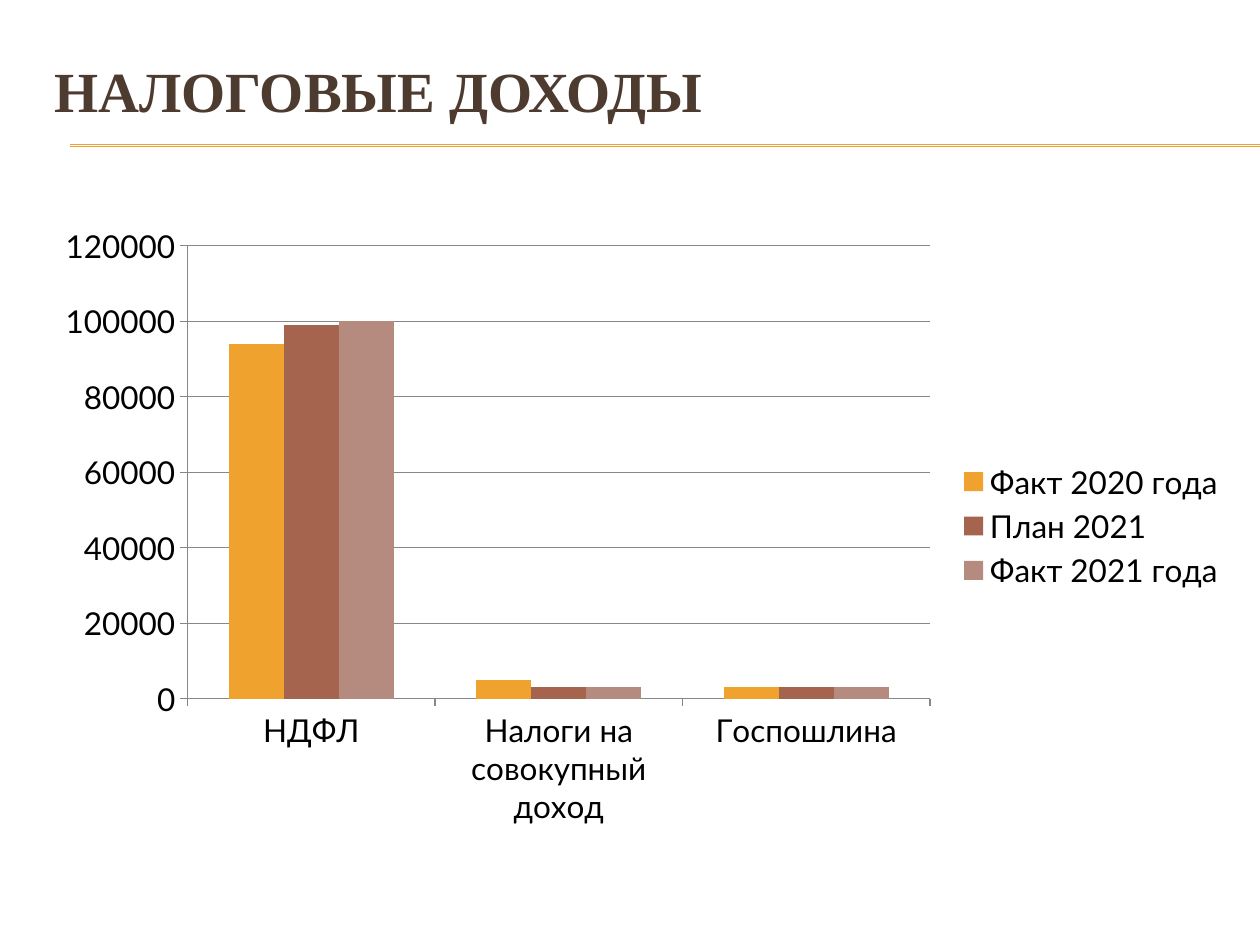
from dataclasses import dataclass

import pptx
import pptx.chart.data
import pptx.dml.color
import pptx.enum.chart
import pptx.enum.shapes
import pptx.enum.text
import pptx.oxml
import pptx.util
from pptx.util import Cm


@dataclass(frozen=True)
class Theme:
    heading: str = "4E3B30"
    accent: str = "F0A22E"
    grid: str = "878787"
    label: str = "000000"
    heading_font: str = "Times New Roman"
    chart_font: str = "Lato"
    heading_size: float = 32.4
    chart_size: float = 18
    line_width: float = 0.75


@dataclass(frozen=True)
class Series:
    name: str
    values: tuple[int, ...]
    color: str


THEME = Theme()
LEFT, WIDTH = Cm(0.84), Cm(24.13)
RULE_LEFT, RULE_RIGHT = Cm(1.42), Cm(25.4)
RULE_LEVELS = (Cm(2.92), Cm(2.95))
TAXES = ("НДФЛ", "Налоги на совокупный доход", "Госпошлина")
REVENUES = (
    Series("Факт 2020 года", (94000, 5000, 3000), "F0A22E"),
    Series("План 2021", (99000, 3000, 3000), "A5644E"),
    Series("Факт 2021 года", (100000, 3000, 3000), "B58B80"),
)


def apply_format(target, values: dict) -> None:
    for attribute, value in values.items():
        setattr(target, attribute, value)


def style_font(font, name: str, size: float, color: str, bold: bool = False) -> None:
    apply_format(font, {"name": name, "size": pptx.util.Pt(size), "bold": bold})
    font.color.rgb = pptx.dml.color.RGBColor.from_string(color)


def style_line(line, color: str) -> None:
    line.color.rgb = pptx.dml.color.RGBColor.from_string(color)
    line.width = pptx.util.Pt(THEME.line_width)


def add_rule(slide, level: int) -> None:
    """Draw a horizontal line that runs to the right edge of the slide."""
    rule = slide.shapes.add_connector(
        pptx.enum.shapes.MSO_CONNECTOR.STRAIGHT, RULE_LEFT, level, RULE_RIGHT, level)
    style_line(rule.line, THEME.accent)
    rule._element.spPr.append(pptx.oxml.parse_xml(
        '<a:effectLst xmlns:a="http://schemas.openxmlformats.org/drawingml/2006/main"/>'))


def add_heading(slide, text: str) -> None:
    heading = slide.shapes.add_textbox(LEFT, Cm(1.27), WIDTH, Cm(2.34))
    frame = heading.text_frame
    apply_format(frame, {
        "word_wrap": True,
        "vertical_anchor": pptx.enum.text.MSO_ANCHOR.MIDDLE,
        "margin_top": 0,
        "margin_bottom": Cm(1.27),
    })
    run = frame.paragraphs[0].add_run()
    run.text = text
    style_font(run.font, THEME.heading_font, THEME.heading_size, THEME.heading, bold=True)


def add_revenue_chart(slide) -> None:
    revenue_data = pptx.chart.data.CategoryChartData(number_format="General")
    revenue_data.categories = TAXES
    for series in REVENUES:
        revenue_data.add_series(series.name, series.values)
    chart = slide.shapes.add_chart(
        pptx.enum.chart.XL_CHART_TYPE.COLUMN_CLUSTERED,
        LEFT, Cm(4.32), WIDTH, Cm(12.57), revenue_data).chart
    apply_format(chart, {"has_title": False, "has_legend": True})
    style_font(chart.font, THEME.chart_font, THEME.chart_size, THEME.label)
    apply_format(chart.legend, {
        "position": pptx.enum.chart.XL_LEGEND_POSITION.RIGHT,
        "include_in_layout": False,
    })

    plot = chart.plots[0]
    apply_format(plot, {"gap_width": 150, "overlap": 0, "vary_by_categories": False})
    for columns, series in zip(plot.series, REVENUES):
        columns.format.fill.solid()
        columns.format.fill.fore_color.rgb = pptx.dml.color.RGBColor.from_string(series.color)

    for axis in (chart.category_axis, chart.value_axis):
        axis.major_tick_mark = pptx.enum.chart.XL_TICK_MARK.OUTSIDE
        style_line(axis.format.line, THEME.grid)
    apply_format(chart.value_axis, {
        "minimum_scale": 0, "maximum_scale": 120000, "major_unit": 20000,
        "has_major_gridlines": True,
    })
    style_line(chart.value_axis.major_gridlines.format.line, THEME.grid)


def main() -> None:
    deck = pptx.Presentation()
    apply_format(deck, {"slide_width": Cm(25.4), "slide_height": Cm(19.05)})
    slide = deck.slides.add_slide(deck.slide_layouts[6])
    for level in RULE_LEVELS:
        add_rule(slide, level)
    add_heading(slide, "НАЛОГОВЫЕ ДОХОДЫ")
    add_revenue_chart(slide)
    deck.save("out.pptx")


if __name__ == "__main__":
    main()
